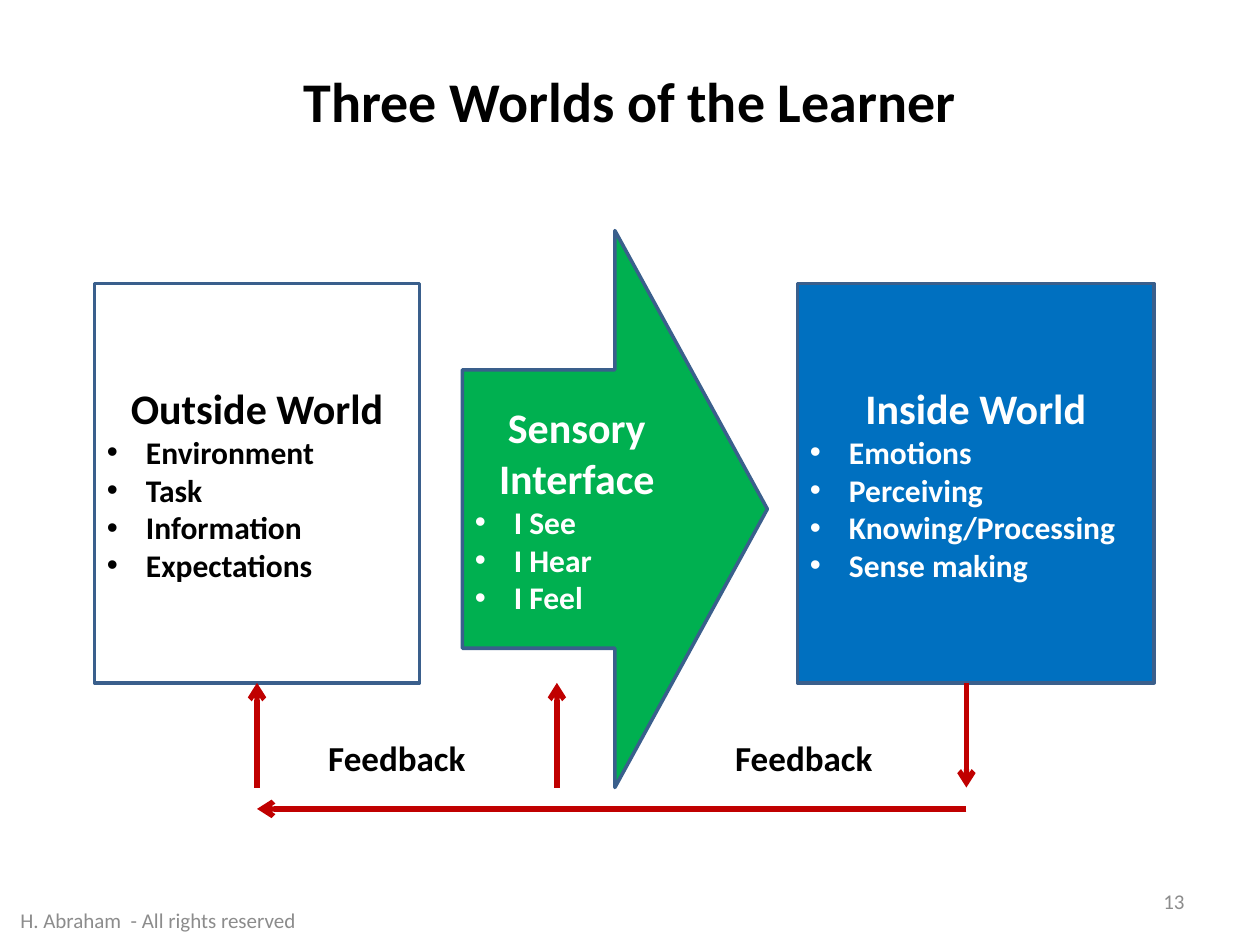
from lxml import etree
from pptx import Presentation
from pptx.dml.color import RGBColor
from pptx.enum.shapes import MSO_CONNECTOR, MSO_SHAPE
from pptx.enum.text import MSO_ANCHOR, PP_ALIGN
from pptx.oxml.ns import qn
from pptx.util import Inches, Pt

LEFT, MID, RIGHT = PP_ALIGN.LEFT, PP_ALIGN.CENTER, PP_ALIGN.RIGHT
CENTER = MSO_ANCHOR.MIDDLE
RECT, ARROW = MSO_SHAPE.RECTANGLE, MSO_SHAPE.RIGHT_ARROW
LINE = MSO_CONNECTOR.STRAIGHT


def rgb(code):
    return RGBColor.from_string(code)


def style(para, size, color, bold=True, align=MID):
    para.alignment = align
    for run in para.runs:
        run.font.name = "Calibri"
        run.font.size = Pt(size)
        run.font.bold = bold
        run.font.color.rgb = rgb(color)


deck = Presentation()
deck.slide_width, deck.slide_height = Inches(10), Inches(7.5)
slide = deck.slides.add_slide(deck.slide_layouts[5])
shapes = slide.shapes

title = shapes.title
title.left, title.top = Inches(0), Inches(0.17)
title.width, title.height = Inches(10), Inches(1.25)
title.text_frame.text = "Three Worlds of the Learner"
title.text_frame.vertical_anchor = CENTER
style(title.text_frame.paragraphs[0], 32, "000000")

worlds = [
    (RECT, 0.75, 2.25, 2.58, 3.17, "FFFFFF", "000000", "Outside World",
     ["Environment", "Task", "Information", "Expectations"]),
    (RECT, 6.33, 2.25, 2.83, 3.17, "0070C0", "FFFFFF", "Inside World",
     ["Emotions", "Perceiving", "Knowing/Processing", "Sense making"]),
    (ARROW, 3.67, 1.83, 2.42, 4.42, "00B050", "FFFFFF", "Sensory Interface",
     ["I See", "I Hear", "I Feel"]),
]
boxes = []
for kind, x, y, w, h, fill, ink, head, items in worlds:
    box = shapes.add_shape(kind, Inches(x), Inches(y), Inches(w), Inches(h))
    box.shadow.inherit = False
    box.fill.solid()
    box.fill.fore_color.rgb = rgb(fill)
    box.line.color.rgb = rgb("3A5F8C")
    box.line.width = Pt(2)
    frame = box.text_frame
    frame.word_wrap = True
    frame.vertical_anchor = CENTER
    frame.text = head
    style(frame.paragraphs[0], 24, ink)
    for item in items:
        para = frame.add_paragraph()
        para.text = item
        style(para, 18, ink, align=LEFT)
        props = para._p.get_or_add_pPr()
        props.set("marL", str(Inches(0.31)))
        props.set("indent", str(Inches(-0.31)))
        etree.SubElement(props, qn("a:buFont")).set("typeface", "Arial")
        etree.SubElement(props, qn("a:buChar")).set("char", "•")
    boxes.append(box)

links = [
    (7.67, 5.42, 7.67, 6.25, None),
    (7.67, 6.42, 2.04, 6.42, None),
    (2.04, 6.25, 2.04, 5.42, boxes[0]),
    (4.42, 6.25, 4.42, 5.42, None),
]
for x1, y1, x2, y2, goal in links:
    link = shapes.add_connector(LINE, Inches(x1), Inches(y1), Inches(x2), Inches(y2))
    link.line.color.rgb = rgb("C00000")
    link.line.width = Pt(3)
    etree.SubElement(link.line._get_or_add_ln(), qn("a:tailEnd")).set("type", "arrow")
    etree.SubElement(link._element.spPr, qn("a:effectLst"))
    if goal:
        link.end_connect(goal, 2)

notes = [
    (2.4, 5.81, 1.5, "Feedback", 20, "000000", True, MID),
    (5.63, 5.81, 1.5, "Feedback", 20, "000000", True, MID),
    (7.17, 6.95, 2.33, "13", 12, "8C8C8C", False, RIGHT),
    (-0.33, 7.1, 3.17, "H. Abraham  - All rights reserved", 12, "8C8C8C", False, MID),
]
for x, y, w, text, size, color, bold, align in notes:
    note = shapes.add_textbox(Inches(x), Inches(y), Inches(w), Inches(0.4))
    frame = note.text_frame
    frame.word_wrap = True
    frame.vertical_anchor = CENTER
    frame.text = text
    style(frame.paragraphs[0], size, color, bold, align)

deck.save("out.pptx")
